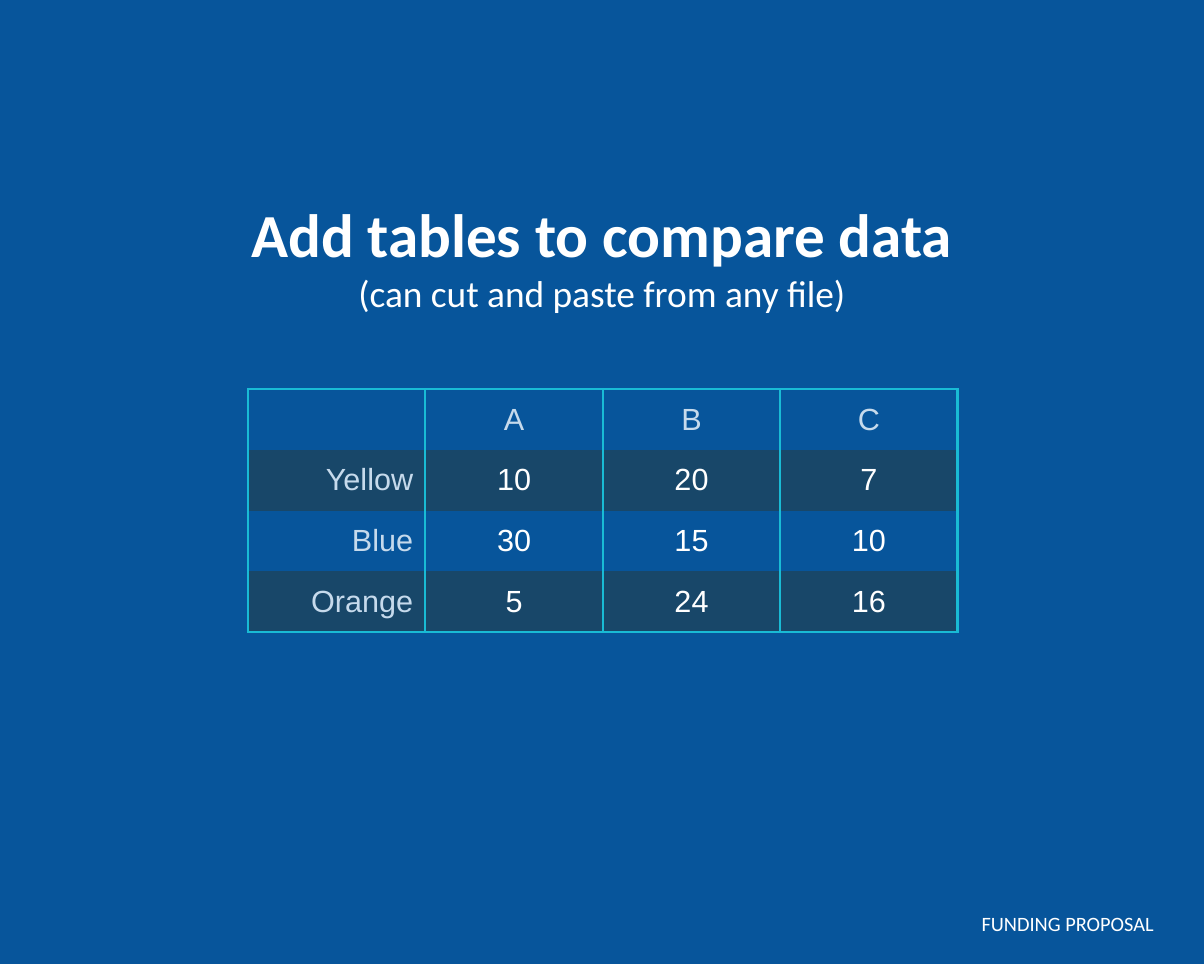
from dataclasses import dataclass
from typing import Optional

from lxml import etree
from pptx import Presentation
from pptx.dml.color import RGBColor
from pptx.enum import text
from pptx.oxml import ns
from pptx.util import Pt


@dataclass(frozen=True)
class Theme:
    background: str = "07559B"
    band: str = "184769"
    border: str = "19BBD5"
    label: str = "C6DAEC"
    white: str = "FFFFFF"
    heading_font: str = "Calibri"
    table_font: str = "Arial"
    title_size: float = 36
    subtitle_size: float = 22
    table_size: float = 18
    footer_size: float = 12
    border_width: float = 1.5


@dataclass(frozen=True)
class Box:
    left: float
    top: float
    width: float
    height: float

    def lengths(self) -> tuple:
        return Pt(self.left), Pt(self.top), Pt(self.width), Pt(self.height)


THEME = Theme()
TITLE_BOX = Box(53.3, 112, 601.9, 75.6)
TABLE_BOX = Box(145.9, 229, 417.6, 143)
FOOTER_BOX = Box(568.8, 532.8, 117.4, 21.6)
ROWS = [
    ["", "A", "B", "C"],
    ["Yellow", "10", "20", "7"],
    ["Blue", "30", "15", "10"],
    ["Orange", "5", "24", "16"],
]


def set_attributes(target, values: dict) -> None:
    for name, value in values.items():
        setattr(target, name, value)


def add_run(paragraph, words: str, size: float, font: str, color: str, bold: bool = False) -> None:
    run = paragraph.add_run()
    run.text = words
    set_attributes(run.font, {"size": Pt(size), "name": font, "bold": bold})
    run.font.color.rgb = RGBColor.from_string(color)


def add_border(cell, side: str, color: Optional[str]) -> None:
    properties = cell._tc.get_or_add_tcPr()
    line = etree.SubElement(properties, ns.qn(f"a:ln{side}"), w=str(Pt(THEME.border_width)))
    if color is None:
        etree.SubElement(line, ns.qn("a:noFill"))
    else:
        fill = etree.SubElement(line, ns.qn("a:solidFill"))
        etree.SubElement(fill, ns.qn("a:srgbClr"), val=color)


def format_cell(cell, words: str, row: int, column: int) -> None:
    set_attributes(cell, {
        "margin_left": Pt(7.2), "margin_right": Pt(7.2),
        "margin_top": Pt(5), "margin_bottom": Pt(5),
        "vertical_anchor": text.MSO_ANCHOR.MIDDLE,
    })
    # Vertical rules everywhere, horizontal rules only around the table
    visible = {"L": True, "R": True, "T": row == 0, "B": row == len(ROWS) - 1}
    for side, shown in visible.items():
        add_border(cell, side, THEME.border if shown else None)
    if row % 2:
        cell.fill.solid()
        cell.fill.fore_color.rgb = RGBColor.from_string(THEME.band)
    else:
        cell.fill.background()
    if words:
        paragraph = cell.text_frame.paragraphs[0]
        paragraph.alignment = text.PP_ALIGN.CENTER if column else text.PP_ALIGN.RIGHT
        color = THEME.white if row and column else THEME.label
        add_run(paragraph, words, THEME.table_size, THEME.table_font, color)


def add_title(slide) -> None:
    title = slide.shapes.title
    set_attributes(title, dict(zip(("left", "top", "width", "height"), TITLE_BOX.lengths())))
    set_attributes(title.text_frame, {
        "word_wrap": True, "vertical_anchor": text.MSO_ANCHOR.TOP,
        "auto_size": text.MSO_AUTO_SIZE.NONE,
    })
    paragraph = title.text_frame.paragraphs[0]
    paragraph.alignment = text.PP_ALIGN.CENTER
    add_run(paragraph, "Add tables to compare data", THEME.title_size,
            THEME.heading_font, THEME.white, bold=True)
    paragraph.add_line_break()
    add_run(paragraph, "(can cut and paste from any file)", THEME.subtitle_size,
            THEME.heading_font, THEME.white)


def add_comparison_table(slide) -> None:
    table = slide.shapes.add_table(len(ROWS), len(ROWS[0]), *TABLE_BOX.lengths()).table
    set_attributes(table, {"first_row": False, "horz_banding": False})
    for row, values in enumerate(ROWS):
        for column, words in enumerate(values):
            format_cell(table.cell(row, column), words, row, column)


def add_footer(slide) -> None:
    frame = slide.shapes.add_textbox(*FOOTER_BOX.lengths()).text_frame
    set_attributes(frame, {"word_wrap": False, "auto_size": text.MSO_AUTO_SIZE.SHAPE_TO_FIT_TEXT})
    paragraph = frame.paragraphs[0]
    paragraph.alignment = text.PP_ALIGN.RIGHT
    add_run(paragraph, "FUNDING PROPOSAL", THEME.footer_size, THEME.heading_font, THEME.white)


def main() -> None:
    presentation = Presentation()
    set_attributes(presentation, {"slide_width": Pt(708.5), "slide_height": Pt(567.4)})
    slide = presentation.slides.add_slide(presentation.slide_layouts[5])

    # Background
    slide.background.fill.solid()
    slide.background.fill.fore_color.rgb = RGBColor.from_string(THEME.background)

    # Content
    add_footer(slide)
    add_title(slide)
    add_comparison_table(slide)
    presentation.save("out.pptx")


if __name__ == "__main__":
    main()
